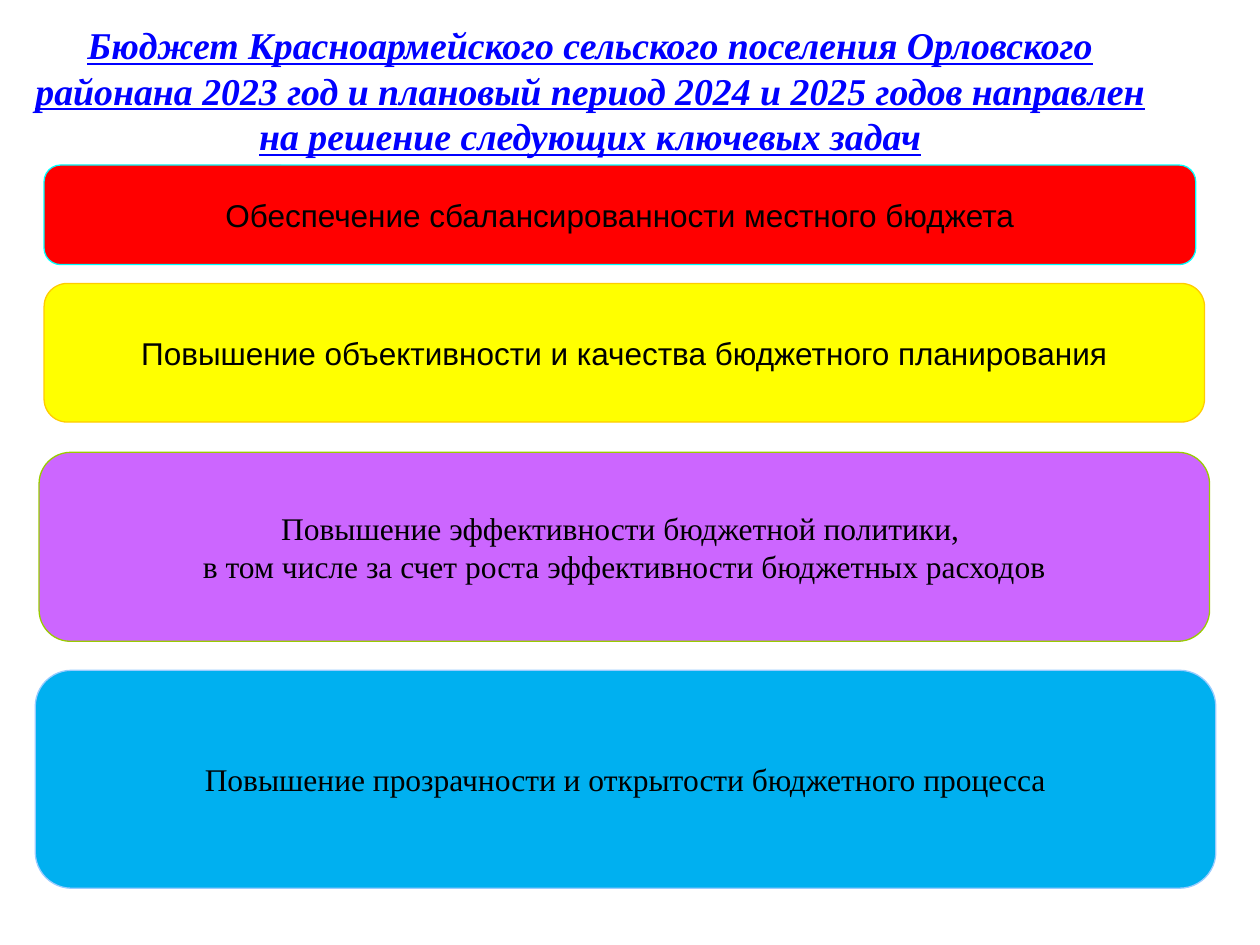
from pptx import Presentation, util as u
from pptx.dml.color import RGBColor
from pptx.enum import shapes, text

BLACK = RGBColor(0, 0, 0)
BLUE = RGBColor(0, 0, 0xFF)
RED = RGBColor(0xFF, 0, 0)
AQUA = RGBColor(0, 0xFF, 0xFF)
YELLOW = RGBColor(0xFF, 0xFF, 0)
GOLD = RGBColor(0xFF, 0xCC, 0)
VIOLET = RGBColor(0xCC, 0x66, 0xFF)
GREEN = RGBColor(0x99, 0xCC, 0)
SKY = RGBColor(0, 0xB0, 0xF0)
PALE_BLUE = RGBColor(0x99, 0xCC, 0xFF)

SANS, SERIF = "Arial", "Times New Roman"
COLS, ROWS = 100, 75  # grid cells across and down the slide

TITLE = ("Бюджет Красноармейского сельского поселения Орловского районана "
         "2023 год и плановый период 2024 и 2025 годов направлен "
         "на решение следующих ключевых задач")

# left, top, width, height in grid cells; fill, line, font, lines of text
TASKS = [
    (3.5, 13.1, 91.4, 7.9, RED, AQUA, SANS,
     ["Обеспечение сбалансированности местного бюджета"]),
    (3.5, 22.5, 92.1, 11, YELLOW, GOLD, SANS,
     ["Повышение объективности и качества бюджетного планирования"]),
    (3.1, 35.9, 92.9, 15, VIOLET, GREEN, SERIF,
     ["Повышение эффективности бюджетной политики, ",
      "в том числе за счет роста эффективности бюджетных расходов"]),
    (2.8, 53.2, 93.7, 17.3, SKY, PALE_BLUE, SERIF,
     ["Повышение прозрачности и открытости бюджетного процесса"]),
]


class Deck:
    def __init__(self, width, height):
        self.prs = Presentation()
        self.prs.slide_width, self.prs.slide_height = u.Inches(width), u.Inches(height)
        self.s = self.prs.slides.add_slide(self.prs.slide_layouts[6])

    def box(self, left, top, width, height):
        """Turn grid cells into slide lengths."""
        col, row = self.prs.slide_width / COLS, self.prs.slide_height / ROWS
        return [round(v) for v in (left * col, top * row, width * col, height * row)]

    def set_text(self, sp, lines, size, color, wrap, **font):
        tf = sp.text_frame
        tf.word_wrap = wrap
        tf.vertical_anchor = text.MSO_ANCHOR.MIDDLE
        for i, line in enumerate(lines):
            p = tf.add_paragraph() if i else tf.paragraphs[0]
            p.alignment = text.PP_ALIGN.CENTER
            r = p.add_run()
            r.text = line
            r.font.color.rgb = color
            for name, value in {"size": u.Pt(size), **font}.items():
                setattr(r.font, name, value)

    def title(self, line, *cells):
        sp = self.s.shapes.add_textbox(*self.box(*cells))
        self.set_text(sp, [line], 21.6, BLUE, True,
                      name=SERIF, bold=True, italic=True, underline=True)

    def task(self, left, top, width, height, fill, outline, font, lines):
        sp = self.s.shapes.add_shape(shapes.MSO_SHAPE.ROUNDED_RECTANGLE,
                                     *self.box(left, top, width, height))
        sp.shadow.inherit = False
        sp.fill.solid()
        sp.fill.fore_color.rgb = fill
        sp.line.color.rgb = outline
        sp.line.width = u.Pt(0.75)
        self.set_text(sp, lines, 18, BLACK, False, name=font)


def main():
    deck = Deck(10, 7.5)
    deck.title(TITLE, 0, 2.8, 93.7, 8.7)
    for task in TASKS:
        deck.task(*task)
    deck.prs.save("out.pptx")


if __name__ == "__main__":
    main()
